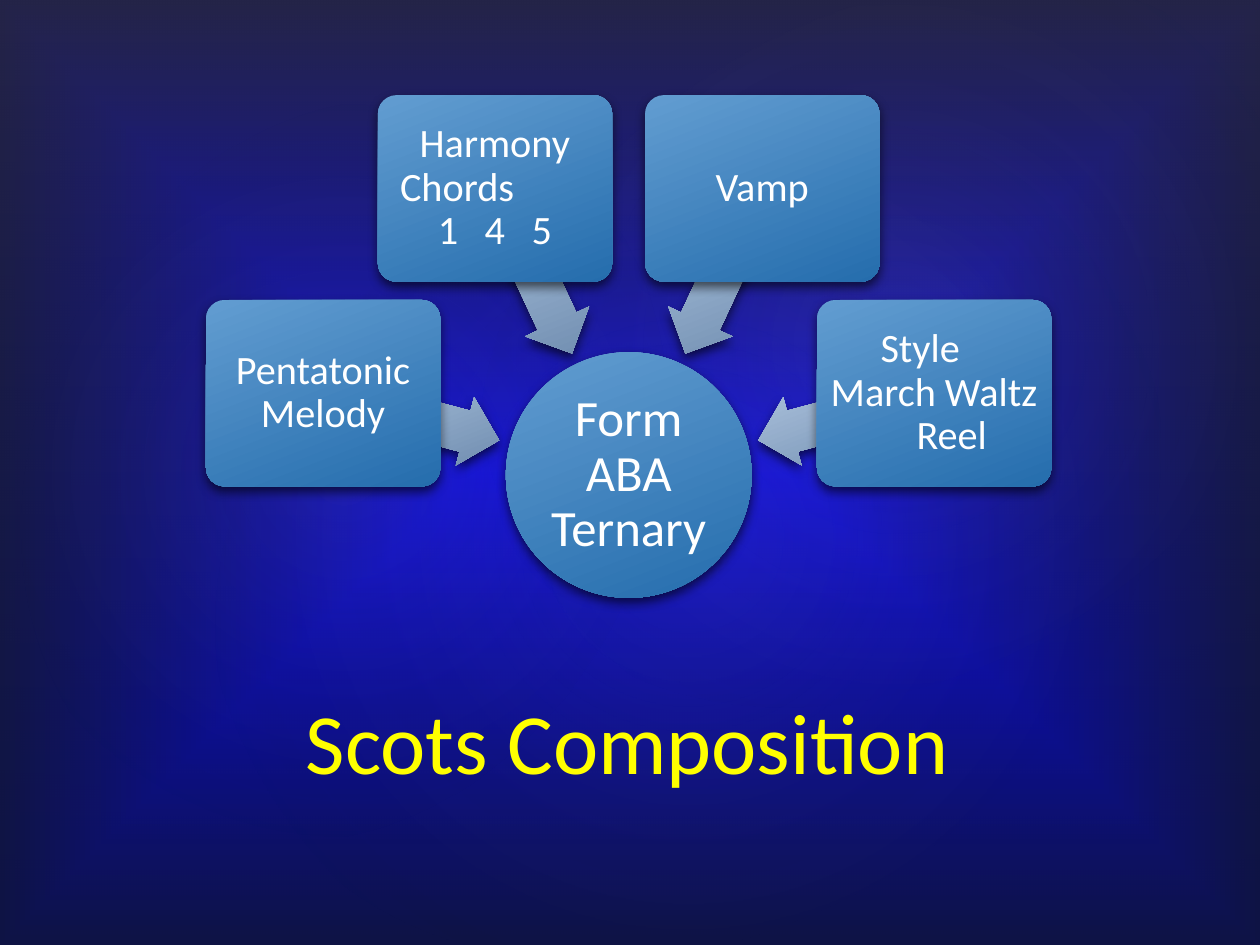
from math import cos, radians, sin

from lxml.etree import SubElement
from pptx import Presentation
from pptx.dml.color import RGBColor
from pptx.enum.shapes import MSO_SHAPE
from pptx.enum.text import MSO_ANCHOR, PP_ALIGN
from pptx.oxml.ns import qn
from pptx.util import Inches, Pt

THEME = {
    "font": "Calibri", "white": "FFFFFF", "title": "FFFF00",
    "title_size": 49, "hub_size": 29, "box_size": 23,
    "bg": [(0, "0000FF", 100), (100, "0C1143", 100)],
    "veil": [(0, "504652", 36), (100, "242852", 10)],
    "glow": [(0, "C4BCC6", 8), (58, "242852", 0)],
    "node": [(0, "629DD1", 100), (100, "256DAD", 100)],
    "arrow": [(0, "B7CCE5", 100), (100, "6C8AAD", 100)],
}
TITLE = "Scots Composition"
HUB = "Form ABA Ternary"
# Each line: text, left margin, right margin, letter spacing in points
BOXES = [
    (195, [("Pentatonic Melody", 0, 0, 0)]),
    (245, [("Harmony", 0, 0, 0), ("Chords", 0, 0.6, 0), ("1 4 5", 0, 0, 5)]),
    (295, [("Vamp", 0, 0, 0)]),
    (345, [("Style", 0, 0.22, 0), ("March Waltz", 0, 0, 0), ("Reel", 0.28, 0, 0)]),
]
GLOWS = [
    (5.46, 4.26, 7.92, 6.24, 328.7),
    (2.73, 3.73, 6.06, 4.9, 294.3),
    (7.12, 2.73, 7.09, 5.2, 328.7),
]
CX, CY = 4.99, 3.77
HUB_D, BOX_W, BOX_H = 1.95, 1.86, 1.48
ARROW_W, ARROW_H = 1.45, 0.56
BOX_R, ARROW_R = 2.51, 1.79


def set_gradient(fill, props, stops, angle=None, path_kind=None):
    fill.solid()
    old = props.find(qn("a:solidFill"))
    grad = old.makeelement(qn("a:gradFill"), {"rotWithShape": "0"})
    props.replace(old, grad)
    gs_list = SubElement(grad, qn("a:gsLst"))
    for pos, color, alpha in stops:
        gs = SubElement(gs_list, qn("a:gs"), pos=str(pos * 1000))
        clr = SubElement(gs, qn("a:srgbClr"), val=color)
        if alpha < 100:
            SubElement(clr, qn("a:alpha"), val=str(alpha * 1000))
    if path_kind:
        way = SubElement(grad, qn("a:path"), {"path": path_kind})
        SubElement(way, qn("a:fillToRect"), l="50000", t="50000", r="50000", b="50000")
    else:
        SubElement(grad, qn("a:lin"), ang=str(angle * 60000), scaled="0")


def add_centered(s, kind, cx, cy, w, h, stops, angle=69, path_kind=None, rot=0, adj=()):
    sp = s.shapes.add_shape(kind, Inches(cx - w / 2), Inches(cy - h / 2), Inches(w), Inches(h))
    sp.rotation = rot
    for i, value in enumerate(adj):
        sp.adjustments[i] = value
    sp.line.fill.background()
    sp.shadow.inherit = False
    set_gradient(sp.fill, sp.element.spPr, stops, angle, path_kind)
    return sp


def add_shadow(sp):
    effects = sp.element.spPr.find(qn("a:effectLst"))
    shadow = SubElement(effects, qn("a:outerShdw"), blurRad=str(Pt(6)), dist=str(Pt(3)),
                        dir="5400000", rotWithShape="0")
    clr = SubElement(shadow, qn("a:srgbClr"), val="000000")
    SubElement(clr, qn("a:alpha"), val="60000")


def add_run(p, text, size, color):
    p.alignment = PP_ALIGN.CENTER
    r = p.add_run()
    r.text = text
    r.font.size = Pt(size)
    r.font.name = THEME["font"]
    r.font.color.rgb = RGBColor.from_string(color)
    return r


def write_lines(sp, lines, size, inset):
    tf = sp.text_frame
    tf.word_wrap = True
    tf.vertical_anchor = MSO_ANCHOR.MIDDLE
    tf.margin_left = tf.margin_right = tf.margin_top = tf.margin_bottom = Inches(inset)
    for i, (text, left, right, spacing) in enumerate(lines):
        p = tf.add_paragraph() if i else tf.paragraphs[0]
        p.line_spacing = 0.9
        r = add_run(p, text, size, THEME["white"])
        pPr = p._p.get_or_add_pPr()
        pPr.set("marL", str(Inches(left)))
        pPr.set("marR", str(Inches(right)))
        if spacing:
            r.font._element.set("spc", str(spacing * 100))


def on_ring(radius, angle):
    return CX + radius * cos(radians(angle)), CY + radius * sin(radians(angle))


def main():
    prs = Presentation()
    prs.slide_width, prs.slide_height = Inches(10), Inches(7.5)
    s = prs.slides.add_slide(prs.slide_layouts[5])

    bg_fill = s.background.fill
    bg_fill.solid()
    set_gradient(bg_fill, s.element.find(".//" + qn("p:bgPr")), THEME["bg"], path_kind="shape")
    add_centered(s, MSO_SHAPE.RECTANGLE, 5, 3.75, 10, 7.5, THEME["veil"], angle=90)
    for cx, cy, w, h, rot in GLOWS:
        add_centered(s, MSO_SHAPE.OVAL, cx, cy, w, h, THEME["glow"], path_kind="circle", rot=rot)

    hub = add_centered(s, MSO_SHAPE.OVAL, CX, CY, HUB_D, HUB_D, THEME["node"])
    add_shadow(hub)
    write_lines(hub, [(HUB, 0, 0, 0)], THEME["hub_size"], 0.02)

    for angle, lines in BOXES:
        arrow = add_centered(s, MSO_SHAPE.LEFT_ARROW, *on_ring(ARROW_R, angle), ARROW_W, ARROW_H,
                             THEME["arrow"], rot=angle, adj=(0.6, 0.5))
        box = add_centered(s, MSO_SHAPE.ROUNDED_RECTANGLE, *on_ring(BOX_R, angle), BOX_W, BOX_H,
                           THEME["node"], adj=(0.1,))
        add_shadow(arrow)
        add_shadow(box)
        write_lines(box, lines, THEME["box_size"], 0.05)

    title = s.shapes.title
    title.left, title.top, title.width, title.height = map(Inches, (0.85, 5.33, 8.25, 1))
    title.text_frame.vertical_anchor = MSO_ANCHOR.BOTTOM
    add_run(title.text_frame.paragraphs[0], TITLE, THEME["title_size"], THEME["title"])
    s.shapes.element.append(title.element)

    prs.save("out.pptx")


if __name__ == "__main__":
    main()
